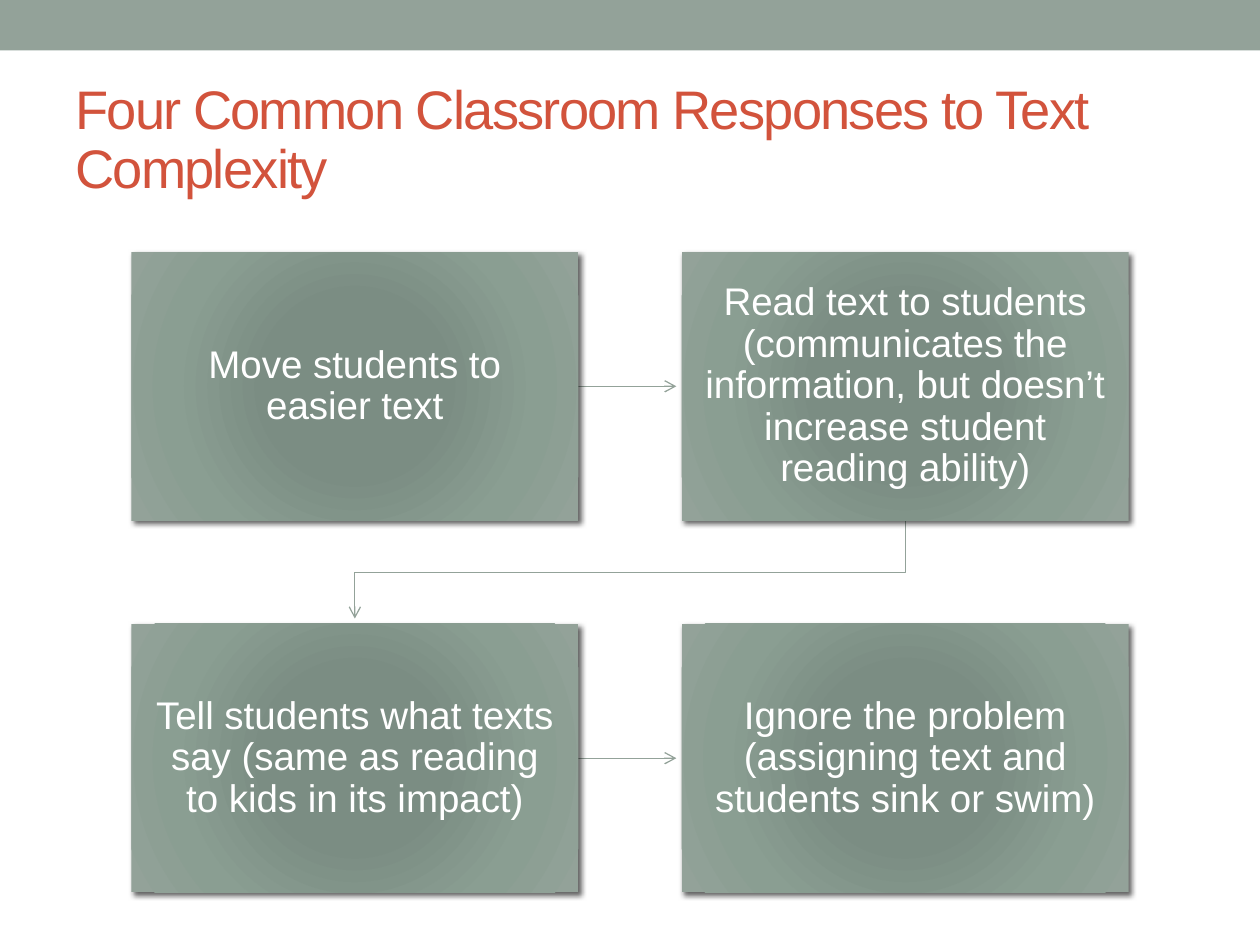
from pptx import Presentation
from pptx.dml.color import RGBColor
from pptx.enum.shapes import MSO_CONNECTOR, MSO_SHAPE
from pptx.enum.text import MSO_ANCHOR, PP_ALIGN
from pptx.oxml import parse_xml
from pptx.oxml.ns import nsdecls, qn
from pptx.util import Pt

RECT = MSO_SHAPE.RECTANGLE
LINE = MSO_CONNECTOR.STRAIGHT
MIDDLE = MSO_ANCHOR.MIDDLE
LEFT = PP_ALIGN.LEFT
CENTER = PP_ALIGN.CENTER
NS = nsdecls("a")

SAGE = "93A299"
RED = "D2533C"
WHITE = "FFFFFF"
STOPS = [(0, "7B8E82"), (34, "7B8D83"), (70, "8A9E92"), (100, SAGE)]
TITLE = "Four Common Classroom Responses to Text Complexity"
STEPS = [
    "Move students to easier text",
    "Read text to students (communicates the information, but doesn’t increase student reading ability)",
    "Tell students what texts say (same as reading to kids in its impact)",
    "Ignore the problem (assigning text and students sink or swim)",
]


def color(value):
    return RGBColor.from_string(value)


def write(shape, text, size, tint, align):
    frame = shape.text_frame
    frame.word_wrap = True
    frame.vertical_anchor = MIDDLE
    frame.text = text
    para = frame.paragraphs[0]
    para.alignment = align
    para.line_spacing = 0.9
    font = para.runs[0].font
    font.name = "Arial"
    font.size = Pt(size)
    font.color.rgb = color(tint)
    return frame


def add_band(slide, left, top, width, height):
    band = slide.shapes.add_shape(RECT, Pt(left), Pt(top), Pt(width), Pt(height))
    band.shadow.inherit = False
    band.fill.solid()
    band.fill.fore_color.rgb = color(SAGE)
    band.line.fill.background()


def add_title(slide, left, top, width, height):
    box = slide.shapes.add_textbox(Pt(left), Pt(top), Pt(width), Pt(height))
    frame = write(box, TITLE, 31, RED, LEFT)
    frame.paragraphs[0].runs[0].font._element.set("spc", "-100")


def add_step(slide, text, left, top, width, height):
    step = slide.shapes.add_shape(RECT, Pt(left), Pt(top), Pt(width), Pt(height))
    stops = "".join(
        f'<a:gs pos="{pos * 1000}"><a:srgbClr val="{tint}"/></a:gs>' for pos, tint in STOPS
    )
    props = step._element.spPr
    props.append(parse_xml(
        f'<a:gradFill {NS} rotWithShape="1"><a:gsLst>{stops}</a:gsLst><a:path path="circle">'
        '<a:fillToRect l="100000" t="100000" r="100000" b="100000"/></a:path></a:gradFill>'
    ))
    step.line.fill.background()
    props.append(parse_xml(
        f'<a:effectLst {NS}><a:outerShdw blurRad="{Pt(3)}" dist="{Pt(2)}" dir="2700000" '
        'rotWithShape="0"><a:srgbClr val="000000"><a:alpha val="60000"/></a:srgbClr>'
        '</a:outerShdw></a:effectLst>'
    ))
    frame = write(step, text, 22, WHITE, CENTER)
    frame.margin_left = frame.margin_right = Pt(12.5)
    frame.margin_top = frame.margin_bottom = Pt(13)


def add_arrow(slide, points):
    spots = [(Pt(x), Pt(y)) for x, y in points]
    if len(spots) == 2:
        arrow = slide.shapes.add_connector(LINE, *spots[0], *spots[1])
    else:
        path = slide.shapes.build_freeform(*spots[0])
        path.add_line_segments(spots[1:], close=False)
        arrow = path.convert_to_shape()
        arrow.fill.background()
    arrow.line.color.rgb = color(SAGE)
    arrow.line.width = Pt(0.75)
    props = arrow._element.spPr
    props.find(qn("a:ln")).append(parse_xml(f'<a:tailEnd {NS} type="arrow"/>'))
    props.append(parse_xml(f"<a:effectLst {NS}/>"))


def add_flow(slide, left, top, width, height):
    gap, stop = 59, 3
    wide, high = (width - gap) / 2, (height - gap) / 2
    cols = [left, left + wide + gap]
    rows = [top, top + high + gap]
    for row in rows:
        mid = row + high / 2
        add_arrow(slide, [(left + wide, mid), (cols[1] - stop, mid)])
    first, last = [col + wide / 2 for col in cols]
    base = top + high
    turn = base + gap / 2
    add_arrow(slide, [(last, base), (last, turn), (first, turn), (first, rows[1] - stop)])
    for i, text in enumerate(STEPS):
        add_step(slide, text, cols[i % 2], rows[i // 2], wide, high)


def main():
    deck = Presentation()
    deck.slide_width, deck.slide_height = Pt(720), Pt(540)
    slide = deck.slides.add_slide(deck.slide_layouts[6])
    add_band(slide, 0, 0, 720, 28.8)
    add_title(slide, 36, 42, 648, 78)
    add_flow(slide, 75, 144, 570, 366)
    deck.save("out.pptx")


if __name__ == "__main__":
    main()
